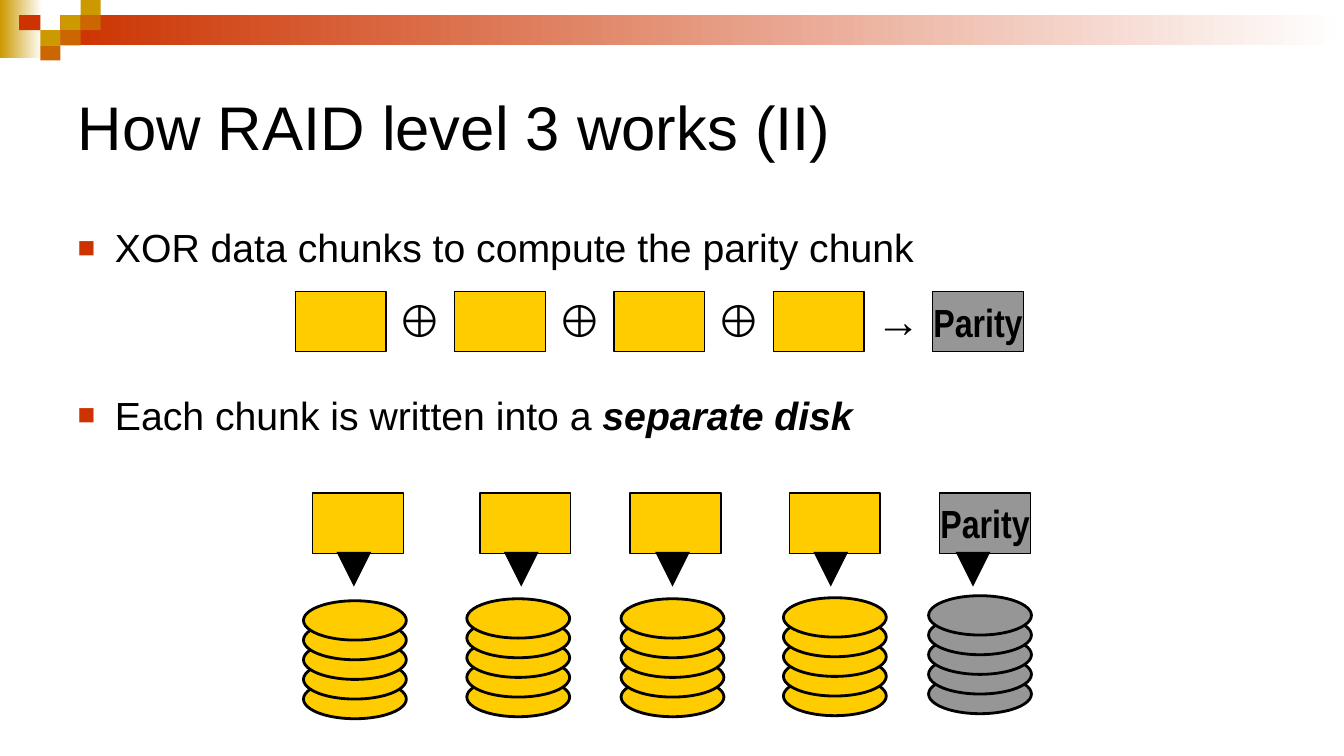
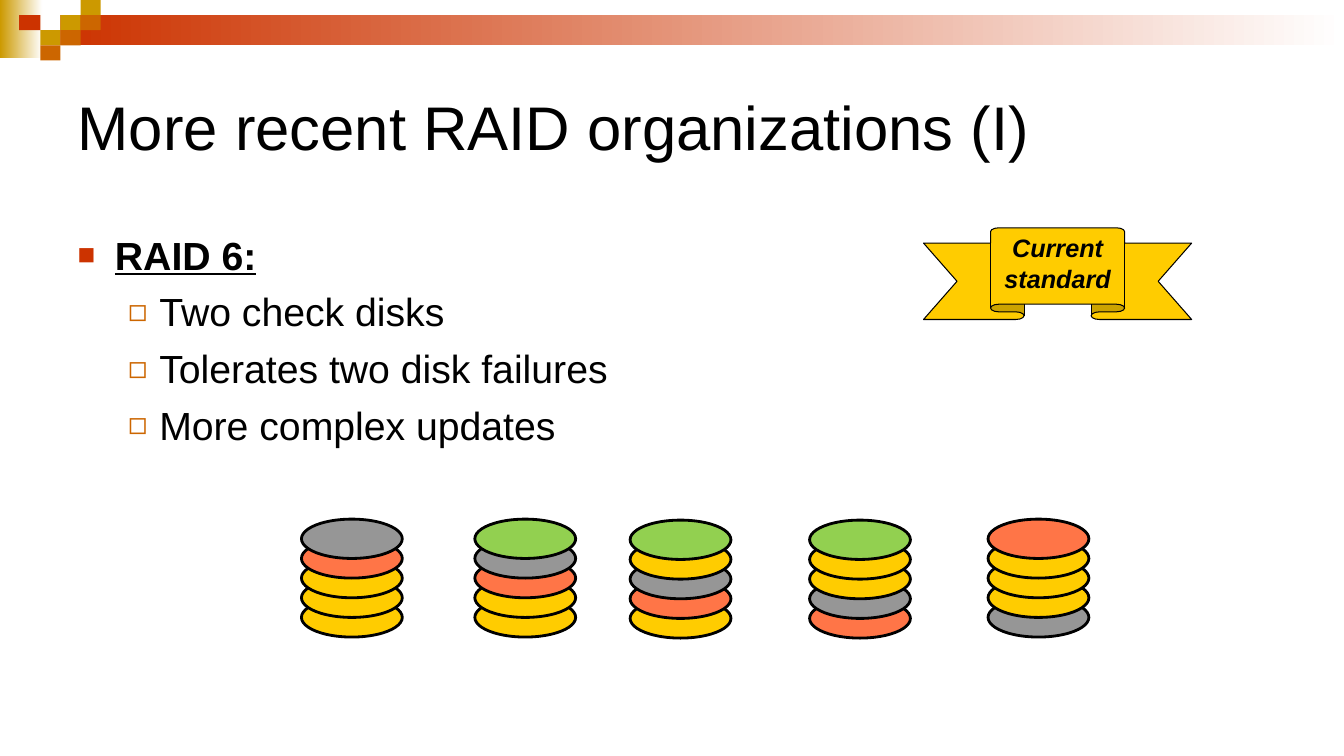
"""Build two slides about RAID level 3 and RAID 6."""

from dataclasses import dataclass

from lxml import etree
from pptx import Presentation
from pptx.dml.color import RGBColor
from pptx.enum.shapes import MSO_CONNECTOR, MSO_SHAPE
from pptx.enum.text import MSO_ANCHOR, MSO_AUTO_SIZE, PP_ALIGN
from pptx.oxml.ns import qn
from pptx.shapes.autoshape import Shape
from pptx.slide import Slide, SlideLayout
from pptx.text.text import TextFrame, _Paragraph
from pptx.util import Inches, Pt

RECTANGLE = MSO_SHAPE.RECTANGLE
ELLIPSE = MSO_SHAPE.OVAL
RIBBON = MSO_SHAPE.UP_RIBBON
STRAIGHT = MSO_CONNECTOR.STRAIGHT
LEFT, CENTER = PP_ALIGN.LEFT, PP_ALIGN.CENTER
TOP, MIDDLE = MSO_ANCHOR.TOP, MSO_ANCHOR.MIDDLE

COLORS = {
    "white": "FFFFFF",
    "black": "000000",
    "red": "CC3300",
    "ochre": "CC9900",
    "orange": "CC6600",
    "data": "FFCC00",
    "parity": "969696",
    "check": "FF7547",
    "spare": "92D050",
}

CHUNK_WIDTH, CHUNK_HEIGHT = 0.9, 0.6
XOR_LEFT, XOR_TOP, XOR_PITCH = 2.93, 2.89, 1.58
STORED_TOP = 4.89
PLATTER_HEIGHT = 0.39
PLATTER_COUNT = 5


@dataclass(frozen=True)
class Tile:
    left: float
    top: float
    width: float
    height: float
    color: str
    fades: bool = False


@dataclass(frozen=True)
class Bullet:
    symbol: str
    color: str
    size: int
    margin: float
    hanging: float


@dataclass(frozen=True)
class Line:
    text: str
    bullet: Bullet
    level: int = 0
    space_before: float = 7


@dataclass(frozen=True)
class Disk:
    left: float
    top: float
    width: float
    platters: tuple[str, ...]


@dataclass(frozen=True)
class StoredChunk:
    left: float
    arrow_x: float
    role: str
    disk_left: float
    disk_top: float


BAND = (
    Tile(0, 0, 0.42, 0.58, "ochre", True),
    Tile(0.6, 0.15, 12.73, 0.3, "red", True),
    Tile(0.6, 0.15, 0.2, 0.15, "ochre"),
    Tile(0.8, 0, 0.2, 0.15, "ochre"),
    Tile(0.8, 0.15, 0.2, 0.15, "orange"),
    Tile(0.4, 0.3, 0.2, 0.15, "ochre"),
    Tile(0.19, 0.15, 0.21, 0.15, "red"),
    Tile(0.6, 0.3, 0.2, 0.15, "orange"),
    Tile(0.4, 0.45, 0.2, 0.15, "orange"),
)

MAIN = Bullet("■", "red", 75, 0.37, 0.37)
SUB = Bullet("◻", "orange", 80, 0.81, 0.31)

STORED_CHUNKS = (
    StoredChunk(3.1, 3.51, "data", 3.01, 5.96),
    StoredChunk(4.76, 5.17, "data", 4.63, 5.94),
    StoredChunk(6.25, 6.67, "data", 6.16, 5.94),
    StoredChunk(7.83, 8.24, "data", 7.77, 5.93),
    StoredChunk(9.32, 9.65, "parity", 9.21, 5.91),
)

RAID6_DISKS = (
    Disk(2.99, 5.15, 1, ("data", "data", "data", "check", "parity")),
    Disk(4.71, 5.15, 1, ("data", "data", "check", "parity", "spare")),
    Disk(6.25, 5.16, 1, ("data", "check", "parity", "data", "spare")),
    Disk(8.03, 5.16, 1, ("check", "parity", "data", "data", "spare")),
    Disk(9.8, 5.15, 1, ("parity", "data", "data", "data", "check")),
)


def rgb(name: str) -> RGBColor:
    return RGBColor.from_string(COLORS[name])


def style_runs(paragraph: _Paragraph, size: float, font: str = "Arial",
               bold: bool = False, italic: bool = False) -> None:
    for run in paragraph.runs:
        run.font.name = font
        run.font.size = Pt(size)
        run.font.bold = bold
        run.font.italic = italic
        run.font.color.rgb = rgb("black")


def write_centered(frame: TextFrame, text: str, size: float, font: str,
                   italic: bool = False) -> None:
    frame.text = text
    for paragraph in frame.paragraphs:
        paragraph.alignment = CENTER
        style_runs(paragraph, size, font, bold=True, italic=italic)


def add_filled(shapes, kind: MSO_SHAPE, tile: Tile, outline: float = 0) -> Shape:
    shape = shapes.add_shape(kind, Inches(tile.left), Inches(tile.top),
                             Inches(tile.width), Inches(tile.height))
    shape.shadow.inherit = False
    if tile.fades:
        shape.fill.gradient()
        shape.fill.gradient_angle = 0
        for stop, position, color in zip(shape.fill.gradient_stops, (0, 1), (tile.color, "white")):
            stop.position = position
            stop.color.rgb = rgb(color)
    else:
        shape.fill.solid()
        shape.fill.fore_color.rgb = rgb(tile.color)
    if outline:
        shape.line.color.rgb = rgb("black")
        shape.line.width = Pt(outline)
    else:
        shape.line.fill.background()
    return shape


def move_band_to_layout(slide: Slide, layout: SlideLayout) -> None:
    for tile in BAND:
        layout.shapes.element.append(add_filled(slide.shapes, RECTANGLE, tile).element)


def set_bullet(paragraph: _Paragraph, bullet: Bullet) -> None:
    properties = paragraph._p.get_or_add_pPr()
    properties.set("marL", str(Inches(bullet.margin)))
    properties.set("indent", str(-Inches(bullet.hanging)))
    color = etree.SubElement(properties, qn("a:buClr"))
    etree.SubElement(color, qn("a:srgbClr"), val=COLORS[bullet.color])
    etree.SubElement(properties, qn("a:buSzPct"), val=str(bullet.size * 1000))
    etree.SubElement(properties, qn("a:buFont"), typeface="Arial")
    etree.SubElement(properties, qn("a:buChar"), char=bullet.symbol)


def write_title(slide: Slide, text: str) -> None:
    title = slide.shapes.title
    title.left, title.top = Inches(0.67), Inches(0.5)
    title.width, title.height = Inches(12), Inches(1.5)
    frame = title.text_frame
    frame.text = text
    frame.vertical_anchor = MIDDLE
    frame.auto_size = MSO_AUTO_SIZE.NONE
    frame.paragraphs[0].alignment = LEFT
    style_runs(frame.paragraphs[0], 44)


def write_body(slide: Slide, top: float, lines: tuple[Line, ...]) -> TextFrame:
    body = slide.placeholders[1]
    body.left, body.top = Inches(0.67), Inches(top)
    body.width, body.height = Inches(12), Inches(4.25)
    frame = body.text_frame
    frame.text = "\n".join(line.text for line in lines)
    frame.auto_size = MSO_AUTO_SIZE.NONE
    for paragraph, line in zip(frame.paragraphs, lines):
        paragraph.level = line.level
        paragraph.space_before = Pt(line.space_before)
        set_bullet(paragraph, line.bullet)
        style_runs(paragraph, 28)
    return frame


def add_chunk(slide: Slide, left: float, top: float, role: str) -> None:
    tile = Tile(left, top, CHUNK_WIDTH, CHUNK_HEIGHT, role)
    chunk = add_filled(slide.shapes, RECTANGLE, tile, 1)
    if role == "parity":
        frame = chunk.text_frame
        frame.word_wrap = False
        frame.vertical_anchor = MIDDLE
        write_centered(frame, "Parity", 28, "Arial Narrow")


def add_operator(slide: Slide, left: float, symbol: str) -> None:
    operator = slide.shapes.add_textbox(Inches(left), Inches(2.86), Inches(0.66), Inches(0.63))
    operator.text_frame.word_wrap = True
    write_centered(operator.text_frame, symbol, 32, "Times New Roman")


def add_disk(slide: Slide, disk: Disk) -> None:
    stack = slide.shapes.add_group_shape()
    for height_rank, role in enumerate(disk.platters):
        top = disk.top + (PLATTER_COUNT - 1 - height_rank) * PLATTER_HEIGHT / 2
        add_filled(stack.shapes, ELLIPSE, Tile(disk.left, top, disk.width, PLATTER_HEIGHT, role), 2)


def add_write_arrow(slide: Slide, x: float) -> None:
    arrow = slide.shapes.add_connector(STRAIGHT, Inches(x), Inches(5.58), Inches(x), Inches(5.82))
    arrow.line.color.rgb = rgb("black")
    arrow.line.width = Pt(8.25)
    etree.SubElement(arrow.line._get_or_add_ln(), qn("a:tailEnd"), type="triangle")
    etree.SubElement(arrow.element.spPr, qn("a:effectLst"))


def build_raid3(slide: Slide) -> None:
    write_title(slide, "How RAID level 3 works (II)")
    frame = write_body(slide, 2.17, (
        Line("XOR data chunks to compute the parity chunk", MAIN, space_before=0),
        Line("Each chunk is written into a ", MAIN, space_before=86),
    ))
    emphasis = frame.paragraphs[1].add_run()
    emphasis.text = "separate disk"
    emphasis.font.name = "Arial"
    emphasis.font.size = Pt(28)
    emphasis.font.bold = emphasis.font.italic = True
    emphasis.font.color.rgb = rgb("black")

    for index, operator in enumerate(("⊕", "⊕", "⊕", "→", "")):
        left = XOR_LEFT + index * XOR_PITCH
        add_chunk(slide, left, XOR_TOP, "data" if operator else "parity")
        if operator:
            add_operator(slide, left + CHUNK_WIDTH + 0.01, operator)

    for chunk in STORED_CHUNKS:
        add_chunk(slide, chunk.left, STORED_TOP, chunk.role)
        add_disk(slide, Disk(chunk.disk_left, chunk.disk_top, 1.02, (chunk.role,) * PLATTER_COUNT))
        add_write_arrow(slide, chunk.arrow_x)


def build_raid6(slide: Slide) -> None:
    write_title(slide, "More recent RAID organizations (I)")
    frame = write_body(slide, 2.24, (
        Line("RAID 6:", MAIN, space_before=0),
        Line("Two check disks", SUB, 1),
        Line("Tolerates two disk failures", SUB, 1),
        Line("More complex updates", SUB, 1),
    ))
    heading = frame.paragraphs[0].runs[0]
    heading.font.bold = heading.font.underline = True

    for disk in RAID6_DISKS:
        add_disk(slide, disk)
    ribbon = add_filled(slide.shapes, RIBBON, Tile(9.16, 2.26, 2.66, 0.91, "data"), 0.75)
    ribbon.text_frame.vertical_anchor = TOP
    write_centered(ribbon.text_frame, "Current\nstandard", 18, "Arial", italic=True)


def main() -> None:
    deck = Presentation()
    deck.slide_width, deck.slide_height = Inches(13.33), Inches(7.5)
    layout = deck.slide_layouts[1]
    raid3, raid6 = (deck.slides.add_slide(layout) for _ in range(2))
    move_band_to_layout(raid3, layout)
    build_raid3(raid3)
    build_raid6(raid6)
    deck.save("out.pptx")


if __name__ == "__main__":
    main()
